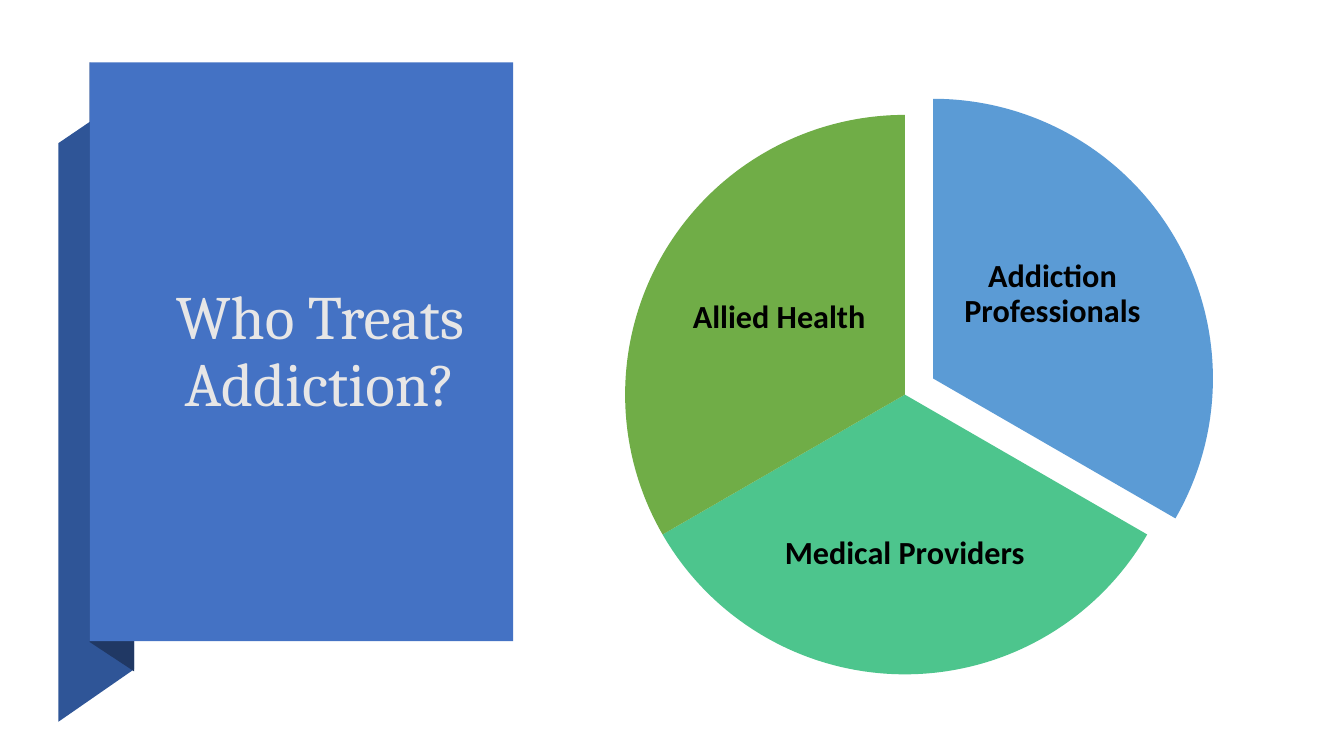
from dataclasses import dataclass

from pptx import Presentation
from pptx.dml.color import RGBColor
from pptx.enum.shapes import MSO_SHAPE
from pptx.enum.text import MSO_ANCHOR, MSO_AUTO_SIZE, PP_ALIGN
from pptx.shapes.autoshape import Shape
from pptx.slide import Slide
from pptx.text.text import TextFrame
from pptx.util import Emu, Pt

EMU_PER_PX = 9144  # 100 px to the inch
PIE_SIZE = 555
LABEL_INSET = 3

Box = tuple[int, int, int, int]


@dataclass(frozen=True)
class Fold:
    points: list[tuple[int, int]]
    color: str


@dataclass(frozen=True)
class Slice:
    label: str
    color: str
    left: int
    top: int
    start: int
    end: int
    label_box: Box


FOLDS = [
    Fold([(58, 716), (133, 664), (133, 91), (58, 142)], "2F5597"),
    Fold([(89, 637), (133, 666), (133, 90), (89, 62)], "203864"),
]
PANEL_BOX = (89, 62, 420, 574)
TITLE_BOX = (120, 97, 395, 506)
SLICES = [
    Slice("Addiction Professionals", "5B9BD5", 648, 98, 270, 30, (950, 200, 188, 185)),
    Slice("Medical Providers", "4DC58D", 620, 114, 30, 150, (772, 464, 251, 172)),
    Slice("Allied Health", "70AD47", 620, 114, 150, 270, (679, 223, 188, 185)),
]


def px(length: int) -> Emu:
    return Emu(length * EMU_PER_PX)


def rgb(color: str) -> RGBColor:
    return RGBColor.from_string(color)


def paint(shape: Shape, color: str) -> None:
    shape.fill.solid()
    shape.fill.fore_color.rgb = rgb(color)
    shape.line.fill.background()
    shape.shadow.inherit = False


def write(frame: TextFrame, text: str, font: str, size: int, color: str, bold: bool) -> None:
    """Fill the frame with one centred paragraph."""
    frame.word_wrap = True
    frame.auto_size = MSO_AUTO_SIZE.NONE
    frame.vertical_anchor = MSO_ANCHOR.MIDDLE
    para = frame.paragraphs[0]
    para.alignment = PP_ALIGN.CENTER
    para.line_spacing = 0.9
    span = para.add_run()
    span.text = text
    span.font.name = font
    span.font.size = Pt(size)
    span.font.bold = bold
    span.font.color.rgb = rgb(color)


def draw_fold(page: Slide, fold: Fold) -> None:
    start, *others = fold.points
    builder = page.shapes.build_freeform(*start, scale=EMU_PER_PX)
    builder.add_line_segments(others, close=True)
    paint(builder.convert_to_shape(), fold.color)


def draw_title(page: Slide) -> None:
    title = page.shapes.title
    title.left, title.top, title.width, title.height = map(px, TITLE_BOX)
    write(title.text_frame, "Who Treats Addiction?", "Cambria", 44, "E7E6E6", False)
    # Bring the title in front of the panel
    title.element.getparent().append(title.element)


def draw_slice(page: Slide, piece: Slice) -> None:
    bounds = map(px, (piece.left, piece.top, PIE_SIZE, PIE_SIZE))
    pie = page.shapes.add_shape(MSO_SHAPE.PIE, *bounds)
    # Angles are stored in 60000ths of a degree, adjustments in 100000ths
    pie.adjustments[0] = piece.start * 0.6
    pie.adjustments[1] = piece.end * 0.6
    paint(pie, piece.color)

    frame = page.shapes.add_textbox(*map(px, piece.label_box)).text_frame
    frame.margin_left = frame.margin_right = px(LABEL_INSET)
    frame.margin_top = frame.margin_bottom = px(LABEL_INSET)
    write(frame, piece.label, "Calibri", 23, "000000", True)


def main() -> None:
    deck = Presentation()
    deck.slide_width, deck.slide_height = px(1333), px(750)
    page = deck.slides.add_slide(deck.slide_layouts.get_by_name("Title Only"))
    for fold in FOLDS:
        draw_fold(page, fold)
    panel = page.shapes.add_shape(MSO_SHAPE.RECTANGLE, *map(px, PANEL_BOX))
    paint(panel, "4472C4")
    draw_title(page)
    for piece in SLICES:
        draw_slice(page, piece)
    deck.save("out.pptx")


if __name__ == "__main__":
    main()
